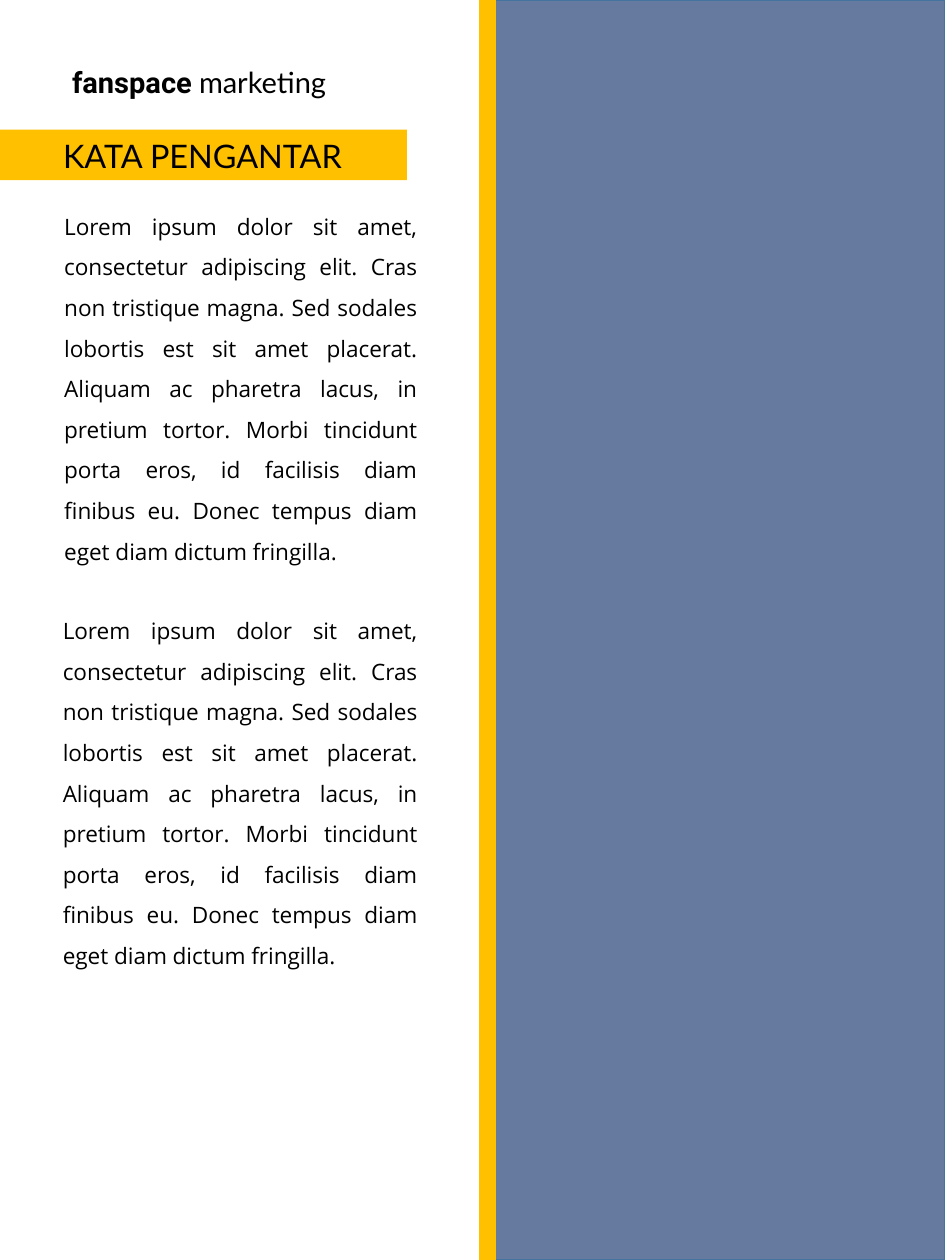
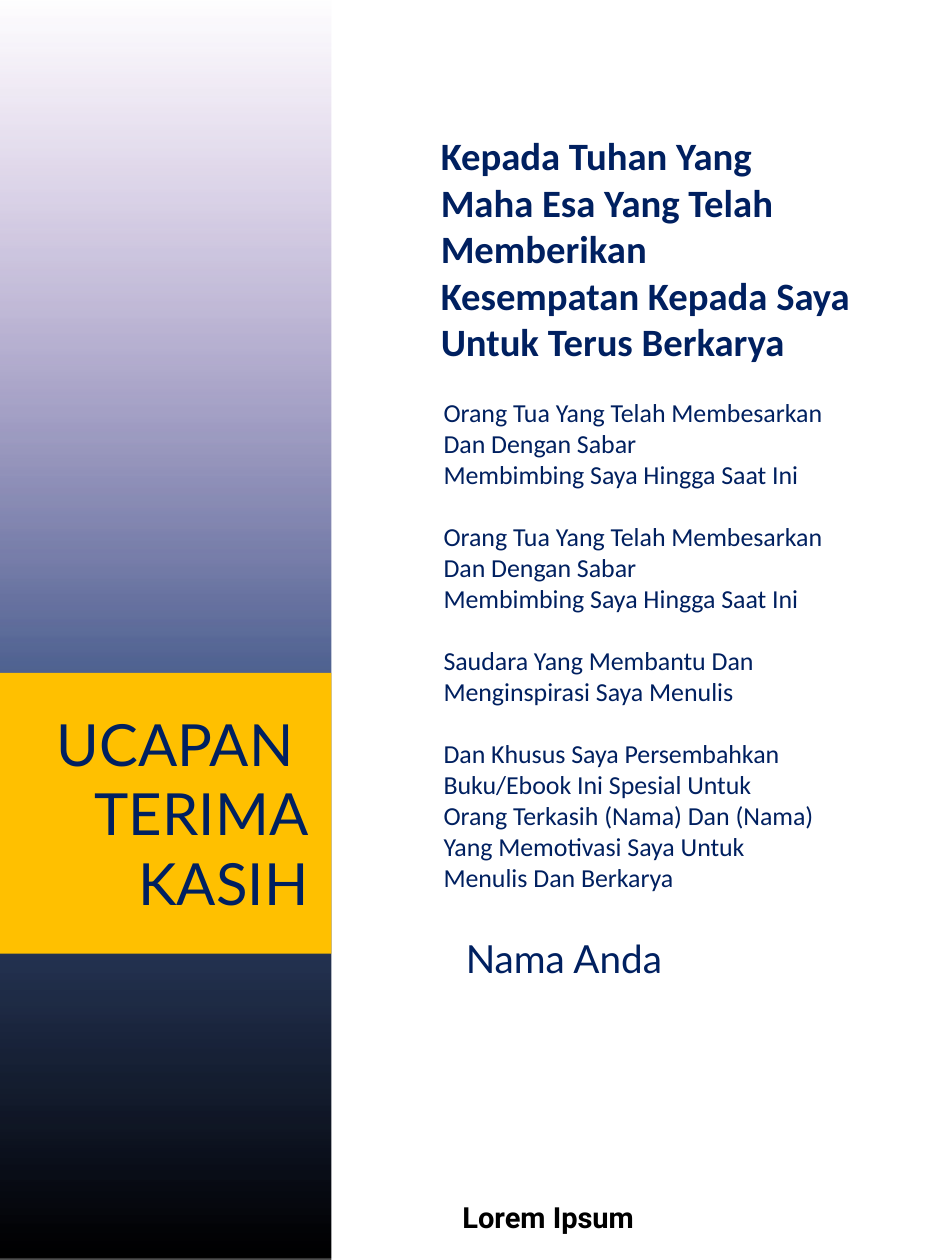
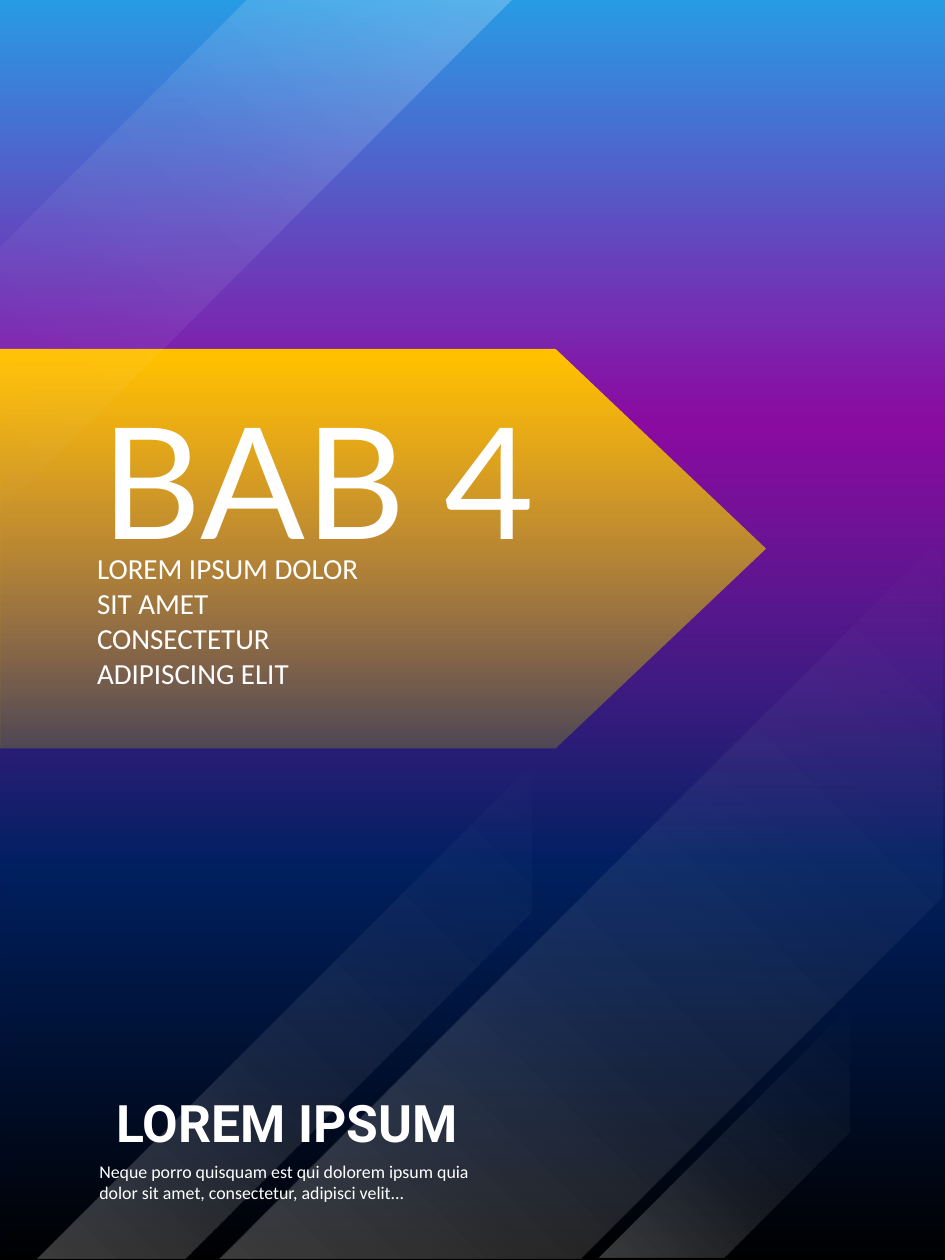
from collections import namedtuple

from lxml import etree
from pptx import Presentation
from pptx.dml.color import RGBColor
from pptx.enum.shapes import MSO_CONNECTOR, MSO_SHAPE
from pptx.enum.text import MSO_ANCHOR, MSO_AUTO_SIZE, PP_ALIGN
from pptx.oxml.ns import qn
from pptx.util import Inches, Pt

RECTANGLE = MSO_SHAPE.RECTANGLE
STRIPE = MSO_SHAPE.DIAGONAL_STRIPE
STRAIGHT = MSO_CONNECTOR.STRAIGHT
TOP = MSO_ANCHOR.TOP
GROW = MSO_AUTO_SIZE.SHAPE_TO_FIT_TEXT
LEFT, CENTER, RIGHT, JUSTIFY = PP_ALIGN.LEFT, PP_ALIGN.CENTER, PP_ALIGN.RIGHT, PP_ALIGN.JUSTIFY

COLUMNS, ROWS = 75, 100
CELL = Inches(0.1)
NARROW_INSET, WIDE_INSET = 0.09, 0.1
TITLE_AND_BODY = 1

COLORS = {
    "white": "FFFFFF",
    "black": "000000",
    "navy": "002060",
    "amber": "FFC000",
    "steel": "43739E",
    "purple": "7030A0",
    "azure": "289BE5",
    "magenta": "9006A1",
    "violet": "4A078C",
    "indigo": "090979",
}

FADE = [(0, "purple", 0), (56, "navy", 74), (100, "black", 100)]
NIGHT = [(0, "purple", 0), (56, "navy", 100), (100, "black", 100)]
GLOW = [(0, "white", 0), (56, "white", 8), (100, "white", 23)]
DUSK = [(0, "azure", 100), (34, "magenta", 100), (71, "violet", 100), (100, "indigo", 100)]

Style = namedtuple("Style", "font size color bold", defaults=(False,))
BRAND = Style("Roboto", 16.6, "black", True)
BRAND_LIGHT = Style("Lato", 16.6, "black")
PREFACE_TITLE = Style("Lato", 18.5, "black")
PREFACE_TEXT = Style("Open Sans", 12.9, "black")
THANKS_TITLE = Style("Lato", 33.2, "navy")
DEDICATION = Style("Calibri", 22.1, "navy", True)
THANKS_TEXT = Style("Calibri", 14.8, "navy")
SIGNATURE = Style("Lato", 22.1, "navy")
CHAPTER_TITLE = Style("Lato", 88.6, "white")
CHAPTER_TEXT = Style("Calibri", 16.6, "white")
AUTHOR = Style("Roboto", 29.5, "white", True)
QUOTE = Style("Calibri", 10.2, "white")

PREFACE = (
    "Lorem ipsum dolor sit amet, consectetur adipiscing elit. Cras non tristique magna. "
    "Sed sodales lobortis est sit amet placerat. Aliquam ac pharetra lacus, in pretium tortor. "
    "Morbi tincidunt porta eros, id facilisis diam finibus eu. "
    "Donec tempus diam eget diam dictum fringilla. "
)
PREFACE_LAYOUT = {"align": JUSTIFY, "spacing": 1.5, "inset": WIDE_INSET}
PARENTS = [
    "Orang Tua Yang Telah Membesarkan Dan Dengan Sabar",
    "Membimbing Saya Hingga Saat Ini",
]
THANKS = [
    PARENTS,
    PARENTS,
    ["Saudara Yang Membantu Dan Menginspirasi Saya Menulis"],
    [
        "Dan Khusus Saya Persembahkan Buku/Ebook Ini Spesial Untuk",
        "Orang Terkasih (Nama) Dan (Nama) Yang Memotivasi Saya Untuk",
        "Menulis Dan Berkarya",
    ],
]


def grid(*cells):
    return [round(cell * CELL) for cell in cells]


def rgb(name):
    return RGBColor.from_string(COLORS[name])


def add_color(parent, name, opacity):
    color = etree.SubElement(parent, qn("a:srgbClr"), val=COLORS[name])
    if opacity < 100:
        etree.SubElement(color, qn("a:alpha"), val=str(opacity * 1000))


def set_gradient(fill, properties, stops, angle):
    fill.background()
    gradient = etree.Element(qn("a:gradFill"), rotWithShape="1")
    stop_list = etree.SubElement(gradient, qn("a:gsLst"))
    for position, name, opacity in stops:
        stop = etree.SubElement(stop_list, qn("a:gs"), pos=str(position * 1000))
        add_color(stop, name, opacity)
    etree.SubElement(gradient, qn("a:lin"), ang=str(angle * 60000), scaled="0")
    properties.replace(properties.find(qn("a:noFill")), gradient)


def add_block(slide, area, color=None, kind=RECTANGLE):
    block = slide.shapes.add_shape(kind, *grid(*area))
    block.shadow.inherit = False
    block.line.fill.background()
    if color:
        block.fill.solid()
        block.fill.fore_color.rgb = rgb(color)
    return block


def add_gradient_block(slide, area, stops, angle=90, kind=RECTANGLE):
    block = add_block(slide, area, kind=kind)
    set_gradient(block.fill, block._element.spPr, stops, angle)
    return block


def add_stripe(slide, area, cut=0.5, flipped=True):
    stripe = add_gradient_block(slide, area, GLOW, 315, STRIPE)
    stripe.adjustments[0] = cut
    if flipped:
        frame = stripe._element.spPr.find(qn("a:xfrm"))
        frame.set("flipH", "1")
        frame.set("flipV", "1")


def add_pointer(slide, left, top, shoulder, tip, bottom):
    corners = [(left, top), (shoulder, top), (tip, (top + bottom) / 2), (shoulder, bottom), (left, bottom)]
    start, *others = [grid(*corner) for corner in corners]
    builder = slide.shapes.build_freeform(*start)
    builder.add_line_segments(others, close=True)
    pointer = builder.convert_to_shape()
    pointer.shadow.inherit = False
    pointer.fill.solid()
    pointer.fill.fore_color.rgb = rgb("amber")
    pointer.line.fill.background()


def add_divider(slide, column, width):
    divider = slide.shapes.add_connector(STRAIGHT, *grid(column, 0, column, ROWS))
    divider.line.color.rgb = rgb("amber")
    divider.line.width = Pt(width)
    etree.SubElement(divider._element.spPr, qn("a:effectLst"))


def apply_style(font, style):
    font.name = style.font
    font.size = Pt(style.size)
    font.bold = style.bold
    font.color.rgb = rgb(style.color)


def prepare_frame(box, wrap, inset=NARROW_INSET):
    frame = box.text_frame
    frame.word_wrap = wrap
    frame.auto_size = GROW
    frame.vertical_anchor = TOP
    frame.margin_left = frame.margin_right = Inches(inset)
    frame.margin_top = frame.margin_bottom = Inches(0.05)
    return frame


def write(box, groups, style, align=LEFT, spacing=1, wrap=True, gap=0, inset=NARROW_INSET):
    frame = prepare_frame(box, wrap, inset)
    paragraph = frame.paragraphs[0]
    lines = [(text, gap if group and not row else 0)
             for group, texts in enumerate(groups) for row, text in enumerate(texts)]
    for number, (text, before) in enumerate(lines):
        if number:
            paragraph = frame.add_paragraph()
        settings = paragraph._p.get_or_add_pPr()
        settings.set("marL", "0")
        settings.set("indent", "0")
        etree.SubElement(settings, qn("a:buNone"))
        paragraph.text = text
        paragraph.alignment = align
        paragraph.line_spacing = spacing
        paragraph.space_before = Pt(before)
        apply_style(paragraph.font, style)


def add_text(slide, area, lines, style, **layout):
    write(slide.shapes.add_textbox(*grid(*area)), [lines], style, **layout)


def add_wordmark(slide, area, *parts):
    frame = prepare_frame(slide.shapes.add_textbox(*grid(*area)), False)
    paragraph = frame.paragraphs[0]
    paragraph.alignment = CENTER
    for text, style in parts:
        run = paragraph.add_run()
        run.text = text
        apply_style(run.font, style)


def fill_placeholder(slide, index, area, groups, style, **layout):
    holder = slide.placeholders[index]
    holder.left, holder.top, holder.width, holder.height = grid(*area)
    slide.shapes._spTree.append(holder._element)
    write(holder, groups, style, **layout)


def fill_title(slide, area, lines, style, **layout):
    fill_placeholder(slide, 0, area, [lines], style, **layout)


def fill_body(slide, area, groups, style, **layout):
    fill_placeholder(slide, 1, area, groups, style, **layout)


def build_preface(slide):
    panel = add_block(slide, (39.3, 0, 35.7, ROWS), "navy")
    tint = panel._element.spPr.find(qn("a:solidFill"))
    tint.remove(tint[0])
    add_color(tint, "navy", 60)
    panel.line.color.rgb = rgb("steel")
    panel.line.width = Pt(1)
    add_block(slide, (0, 0, 38, ROWS), "white")
    add_wordmark(slide, (4, 4.6, 23.6, 3.7), ("fanspace ", BRAND), ("marketing", BRAND_LIGHT))
    fill_body(slide, (4.1, 15.3, 30, 30.4), [[PREFACE]], PREFACE_TEXT, **PREFACE_LAYOUT)
    add_text(slide, (4, 47.4, 30.1, 30.4), [PREFACE], PREFACE_TEXT, **PREFACE_LAYOUT)
    add_divider(slide, 38.7, 10)
    add_block(slide, (0, 10.3, 32.3, 4), "amber")
    fill_title(slide, (4.1, 10.3, 26.4, 4), ["KATA PENGANTAR"], PREFACE_TITLE, wrap=False)


def build_thanks(slide):
    add_gradient_block(slide, (0, 0, 72.1, ROWS), FADE)
    add_block(slide, (26.3, 0, 48.7, ROWS), "white")
    fill_body(slide, (34.3, 31, 32.1, 40.7), THANKS, THANKS_TEXT, gap=17.5)
    add_block(slide, (0, 53.4, 26.3, 22.3), "amber")
    fill_title(slide, (2.9, 55.7, 22.5, 17.7), ["UCAPAN ", "TERIMA", "KASIH"], THANKS_TITLE, align=RIGHT)
    add_text(slide, (34, 10, 34.6, 19.6), [
        "Kepada Tuhan Yang Maha Esa Yang Telah Memberikan",
        "Kesempatan Kepada Saya Untuk Terus Berkarya",
    ], DEDICATION, inset=WIDE_INSET)
    add_text(slide, (34.8, 94.7, 17.4, 3.7), ["Lorem Ipsum"], BRAND, align=CENTER, wrap=False)
    add_text(slide, (34.9, 73.7, 19.7, 4.7), ["Nama Anda"], SIGNATURE, align=CENTER, wrap=False)


def build_chapter(slide):
    backdrop = slide.background.fill
    backdrop.background()
    set_gradient(backdrop, slide._element.find(".//" + qn("p:bgPr")), DUSK, 90)
    add_pointer(slide, left=0, top=27.7, shoulder=44.1, tip=60.8, bottom=59.4)
    add_gradient_block(slide, (0, 28.7, COLUMNS, 71.3), NIGHT)
    add_stripe(slide, (17.4, 42.5, 57.4, 57.4))
    add_stripe(slide, (47.5, 79.9, 19.9, 19.9))
    add_stripe(slide, (2.9, 60.6, 39.3, 39.3), cut=0.7)
    add_text(slide, (6.8, 86.1, 32, 5.9), ["LOREM IPSUM"], AUTHOR, align=CENTER, wrap=False)
    add_text(slide, (6.9, 91.6, 31.4, 4.4), [
        "Neque porro quisquam est qui dolorem ipsum quia dolor sit amet, consectetur, adipisci velit...",
    ], QUOTE, inset=WIDE_INSET)
    fill_title(slide, (5.5, 30, 39.5, 15.8), ["BAB 4"], CHAPTER_TITLE, align=CENTER, wrap=False)
    fill_body(slide, (6.7, 43.2, 23.9, 12.2),
              [["LOREM IPSUM DOLOR SIT AMET CONSECTETUR ADIPISCING ELIT"]], CHAPTER_TEXT, inset=WIDE_INSET)
    add_stripe(slide, (-1.4, -0.1, 42.1, 42.1), flipped=False)


def main():
    deck = Presentation()
    deck.slide_width, deck.slide_height = grid(COLUMNS, ROWS)
    layout = deck.slide_layouts[TITLE_AND_BODY]
    for build in (build_preface, build_thanks, build_chapter):
        build(deck.slides.add_slide(layout))
    deck.save("out.pptx")


if __name__ == "__main__":
    main()
